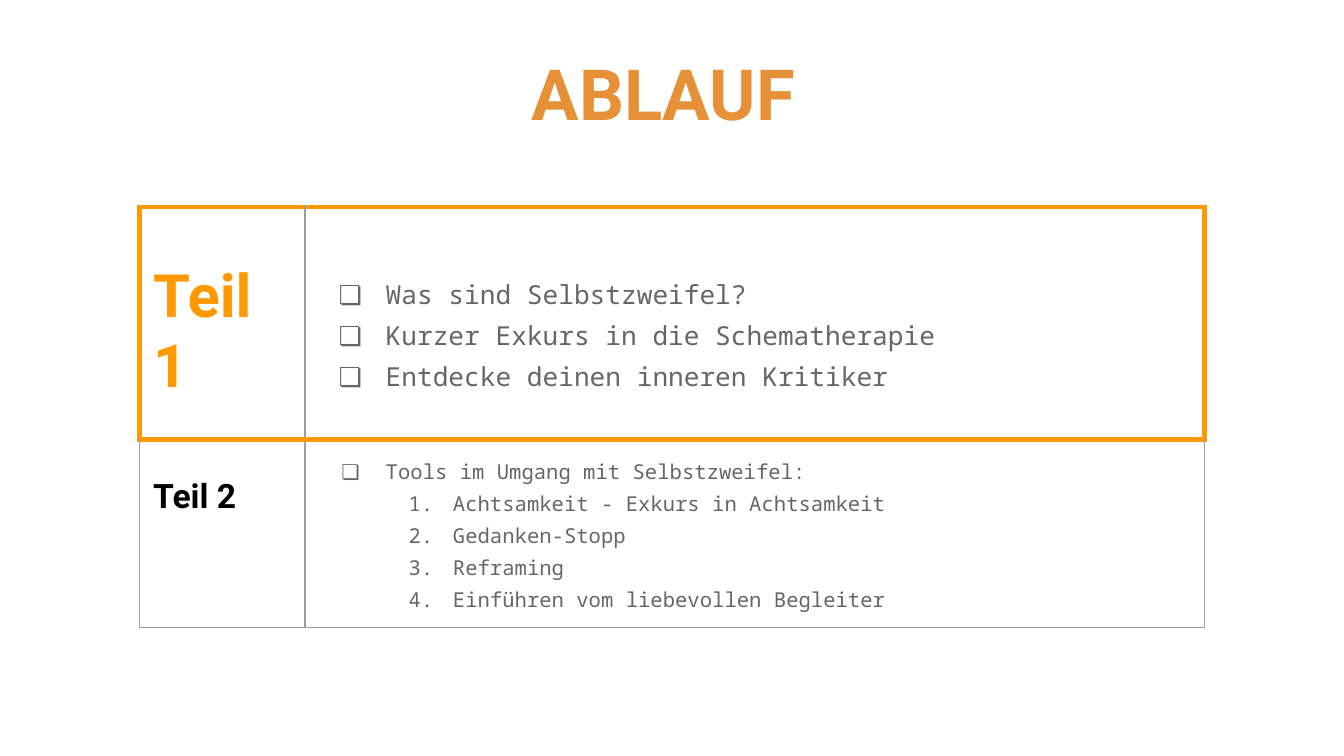
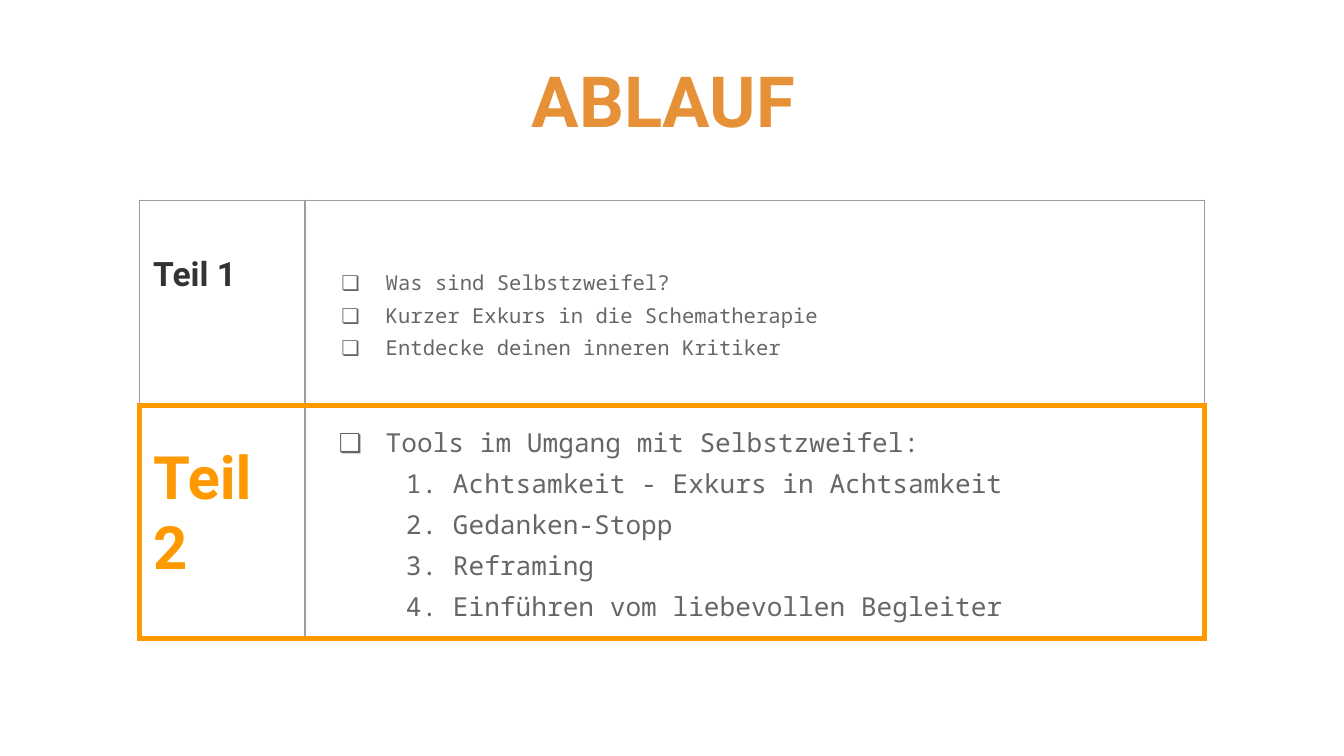
from lxml import etree
from pptx import Presentation
from pptx.dml.color import RGBColor
from pptx.enum import text
from pptx.oxml import ns
from pptx.util import Inches, Pt

TITLE_ORANGE = RGBColor(0xE6, 0x91, 0x38)
ACCENT = RGBColor(0xFF, 0x99, 0x00)
GREY_LINE = RGBColor(0x9E, 0x9E, 0x9E)
GREY_TEXT = RGBColor(0x66, 0x66, 0x66)
DARK = RGBColor(0x33, 0x33, 0x33)
BLACK = RGBColor(0x00, 0x00, 0x00)
HEAD_FONT, LIST_FONT = "Roboto", "Noto Sans Mono"
INSET = 0.1
COLUMNS = (1.23, 6.69)

# Each part: label, label top inset, list top inset, list items as (level, text)
PARTS = (
    ("Teil 1", 0.41, 0.48, (
        (0, "Was sind Selbstzweifel?"),
        (0, "Kurzer Exkurs in die Schematherapie"),
        (0, "Entdecke deinen inneren Kritiker"),
    )),
    ("Teil 2", 0.28, INSET, (
        (0, "Tools im Umgang mit Selbstzweifel:"),
        (1, "Achtsamkeit - Exkurs in Achtsamkeit"),
        (1, "Gedanken-Stopp"),
        (1, "Reframing"),
        (1, "Einführen vom liebevollen Begleiter"),
    )),
)


def set_all(target, values):
    for name, value in values.items():
        setattr(target, name, value)


def write(para, words, font, size, color, bold):
    span = para.add_run()
    span.text = words
    set_all(span.font, {"name": font, "size": Pt(size), "bold": bold})
    span.font.color.rgb = color


def set_insets(frame, top=INSET):
    sides = dict.fromkeys(("margin_left", "margin_right", "margin_bottom"), Inches(INSET))
    set_all(frame, {**sides, "margin_top": Inches(top)})


def add_child(parent, tag, **attributes):
    return etree.SubElement(parent, ns.qn(tag), attributes)


def add_bullet(para, level, hanging):
    """Give the paragraph a box bullet, or a number on the second level."""
    props = para._p.get_or_add_pPr()
    props.set("marL", str(Inches(0.5 * (level + 1))))
    props.set("indent", str(-Inches(hanging)))
    add_child(add_child(props, "a:buClr"), "a:srgbClr", val=str(GREY_TEXT))
    add_child(props, "a:buFont", typeface=LIST_FONT)
    if level:
        add_child(props, "a:buAutoNum", type="arabicPeriod")
    else:
        add_child(props, "a:buChar", char="❏")


def set_borders(cell, row, column, active):
    """Draw grey edges, with a heavy accent frame around the active row."""
    heavy = {
        "L": row == active and column == 0,
        "R": row == active and column == len(COLUMNS) - 1,
        "T": active in (row, row - 1),
        "B": active in (row, row + 1),
    }
    props = cell._tc.get_or_add_tcPr()
    for side, strong in heavy.items():
        width, color = (3, ACCENT) if strong else (0.75, GREY_LINE)
        line = add_child(props, "a:ln" + side, w=str(Pt(width)))
        add_child(add_child(line, "a:solidFill"), "a:srgbClr", val=str(color))
        add_child(line, "a:prstDash", val="solid")
    cell.fill.background()


def fill_label(cell, label, top, size, color):
    set_insets(cell, top)
    write(cell.text_frame.paragraphs[0], label, HEAD_FONT, size, color, True)


def fill_list(cell, items, top, size, hanging):
    set_insets(cell, top)
    frame = cell.text_frame
    for index, (level, words) in enumerate(items):
        para = frame.add_paragraph() if index else frame.paragraphs[0]
        add_bullet(para, level, hanging)
        set_all(para, {"level": level, "line_spacing": 1.15})
        write(para, words, LIST_FONT, size, GREY_TEXT, False)


def add_title(page, top):
    title = page.shapes.title
    set_all(title, {"left": Inches(0.34), "top": Inches(top),
                    "width": Inches(9.32), "height": Inches(0.88)})
    frame = title.text_frame
    set_insets(frame)
    set_all(frame, {"word_wrap": True, "vertical_anchor": text.MSO_ANCHOR.TOP})
    para = frame.paragraphs[0]
    para.alignment = text.PP_ALIGN.CENTER
    write(para, "ABLAUF ", HEAD_FONT, 37.8, TITLE_ORANGE, True)


def add_agenda(page, top, heights, active, quiet_color):
    """Place the two-part agenda table with one part highlighted."""
    holder = page.shapes.add_table(
        len(PARTS), len(COLUMNS), Inches(1.04), Inches(top),
        Inches(sum(COLUMNS)), Inches(sum(heights)))
    table = holder.table
    set_all(table, {"first_row": False, "horz_banding": False})
    for column, width in zip(table.columns, COLUMNS):
        column.width = Inches(width)
    for row, (label, label_top, list_top, items) in enumerate(PARTS):
        table.rows[row].height = Inches(heights[row])
        for column in range(len(COLUMNS)):
            set_borders(table.cell(row, column), row, column, active)
        if row == active:
            label_size, label_color, list_size, hanging = 32, ACCENT, 14, 0.35
        else:
            label_size, label_color, list_size, hanging = 18, quiet_color, 11, 0.33
        fill_label(table.cell(row, 0), label, label_top, label_size, label_color)
        fill_list(table.cell(row, 1), items, list_top, list_size, hanging)


def add_agenda_page(deck, title_top, table_top, heights, active, quiet_color):
    page = deck.slides.add_slide(deck.slide_layouts[5])
    add_title(page, title_top)
    add_agenda(page, table_top, heights, active, quiet_color)


def main():
    deck = Presentation()
    width = Inches(10)
    set_all(deck, {"slide_width": width, "slide_height": width * 9 // 16})
    add_agenda_page(deck, 0.27, 1.54, (1.73, 1.4), 0, BLACK)
    add_agenda_page(deck, 0.32, 1.49, (1.53, 1.73), 1, DARK)
    deck.save("out.pptx")


if __name__ == "__main__":
    main()
